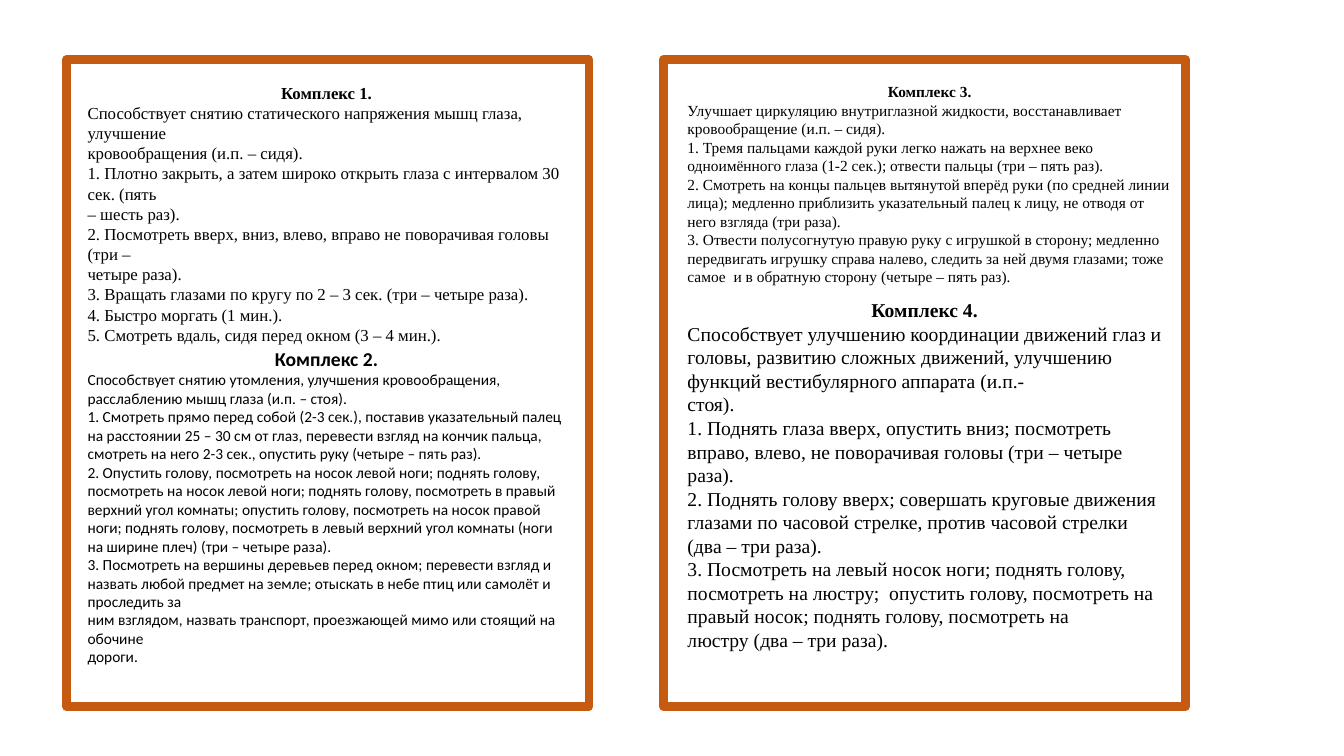
from pptx import Presentation
from pptx.dml.color import RGBColor
from pptx.enum.shapes import MSO_SHAPE
from pptx.enum.text import MSO_AUTO_SIZE, PP_ALIGN
from pptx.util import Inches, Pt

COLORS = {"frame": "C55A11", "text": "000000"}
SERIF, SANS = "Times New Roman", "Calibri"

COMPLEX_1 = [
    "Способствует снятию статического напряжения мышц глаза, улучшение",
    "кровообращения (и.п. – сидя).",
    "1. Плотно закрыть, а затем широко открыть глаза с интервалом 30 сек. (пять",
    "– шесть раз).",
    "2. Посмотреть вверх, вниз, влево, вправо не поворачивая головы (три –",
    "четыре раза).",
    "3. Вращать глазами по кругу по 2 – 3 сек. (три – четыре раза).",
    "4. Быстро моргать (1 мин.).",
    "5. Смотреть вдаль, сидя перед окном (3 – 4 мин.).",
]
COMPLEX_2 = [
    "Способствует снятию утомления, улучшения кровообращения, "
    "расслаблению мышц глаза (и.п. – стоя).",
    "1. Смотреть прямо перед собой (2-3 сек.), поставив указательный палец "
    "на расстоянии 25 – 30 см от глаз, перевести взгляд на кончик пальца, "
    "смотреть на него 2-3 сек., опустить руку (четыре – пять раз).",
    "2. Опустить голову, посмотреть на носок левой ноги; поднять голову,",
    "посмотреть на носок левой ноги; поднять голову, посмотреть в правый",
    "верхний угол комнаты; опустить голову, посмотреть на носок правой ноги; "
    "поднять голову, посмотреть в левый верхний угол комнаты "
    "(ноги на ширине плеч) (три – четыре раза).",
    "3. Посмотреть на вершины деревьев перед окном; перевести взгляд и "
    "назвать любой предмет на земле; отыскать в небе птиц или самолёт и "
    "проследить за",
    "ним взглядом, назвать транспорт, проезжающей мимо или стоящий на обочине",
    "дороги.",
]
COMPLEX_3 = [
    "Улучшает циркуляцию внутриглазной жидкости, восстанавливает",
    "кровообращение (и.п. – сидя).",
    "1. Тремя пальцами каждой руки легко нажать на верхнее веко "
    "одноимённого глаза (1-2 сек.); отвести пальцы (три – пять раз).",
    "2. Смотреть на концы пальцев вытянутой вперёд руки (по средней линии",
    "лица); медленно приблизить указательный палец к лицу, не отводя от "
    "него взгляда (три раза).",
    "3. Отвести полусогнутую правую руку с игрушкой в сторону; медленно",
    "передвигать игрушку справа налево, следить за ней двумя глазами; тоже "
    "самое  и в обратную сторону (четыре – пять раз).",
]
COMPLEX_4 = [
    "Способствует улучшению координации движений глаз и головы, развитию "
    "сложных движений, улучшению функций вестибулярного аппарата (и.п.-",
    "стоя).",
    "1. Поднять глаза вверх, опустить вниз; посмотреть вправо, влево, "
    "не поворачивая головы (три – четыре раза).",
    "2. Поднять голову вверх; совершать круговые движения глазами по часовой "
    "стрелке, против часовой стрелки (два – три раза).",
    "3. Посмотреть на левый носок ноги; поднять голову, посмотреть на "
    "люстру;  опустить голову, посмотреть на правый носок; поднять голову, "
    "посмотреть на",
    "люстру (два – три раза).",
]


def write(p, text, *, font, size, bold=False, align=PP_ALIGN.LEFT):
    p.alignment = align
    r = p.add_run()
    r.text = text
    r.font.name = font
    r.font.size = Pt(size)
    r.font.bold = bold
    r.font.color.rgb = RGBColor.from_string(COLORS["text"])


class Page:
    """Holds the current slide and the style of its frames and exercise texts."""

    def __init__(self, slide, frame_width=6):
        self.slide = slide
        self.frame_width = frame_width

    def frame(self, x, y, w, h):
        sp = self.slide.shapes.add_shape(
            MSO_SHAPE.RECTANGLE, Inches(x), Inches(y), Inches(w), Inches(h))
        sp.shadow.inherit = False
        sp.fill.background()
        sp.line.color.rgb = RGBColor.from_string(COLORS["frame"])
        sp.line.width = Pt(self.frame_width)

    def exercises(self, box, title, lines, font, size, title_size):
        """Add a text box with a centred bold title above the exercise lines."""
        sp = self.slide.shapes.add_textbox(*map(Inches, box))
        tf = sp.text_frame
        tf.word_wrap = True
        tf.auto_size = MSO_AUTO_SIZE.SHAPE_TO_FIT_TEXT
        write(tf.paragraphs[0], title, font=font, size=title_size, bold=True,
              align=PP_ALIGN.CENTER)
        for line in lines:
            write(tf.add_paragraph(), line, font=font, size=size)


def main():
    prs = Presentation()
    prs.slide_width, prs.slide_height = Inches(13.33), Inches(7.5)
    page = Page(prs.slides.add_slide(prs.slide_layouts[6]))

    for x in (0.66, 6.58):
        page.frame(x, 0.59, 5.18, 6.42)

    blocks = [
        ((0.77, 0.77, 4.98, 2.73), COMPLEX_1, SERIF, 12, 12),
        ((0.77, 3.39, 4.98, 3.3), COMPLEX_2, SANS, 11, 14),
        ((6.72, 0.77, 5.04, 2.14), COMPLEX_3, SERIF, 11, 11),
        ((6.72, 2.91, 4.95, 3.64), COMPLEX_4, SERIF, 14, 14),
    ]
    for number, (box, lines, font, size, title_size) in enumerate(blocks, 1):
        page.exercises(box, f"Комплекс {number}. ", lines, font, size, title_size)

    prs.save("out.pptx")


if __name__ == "__main__":
    main()
